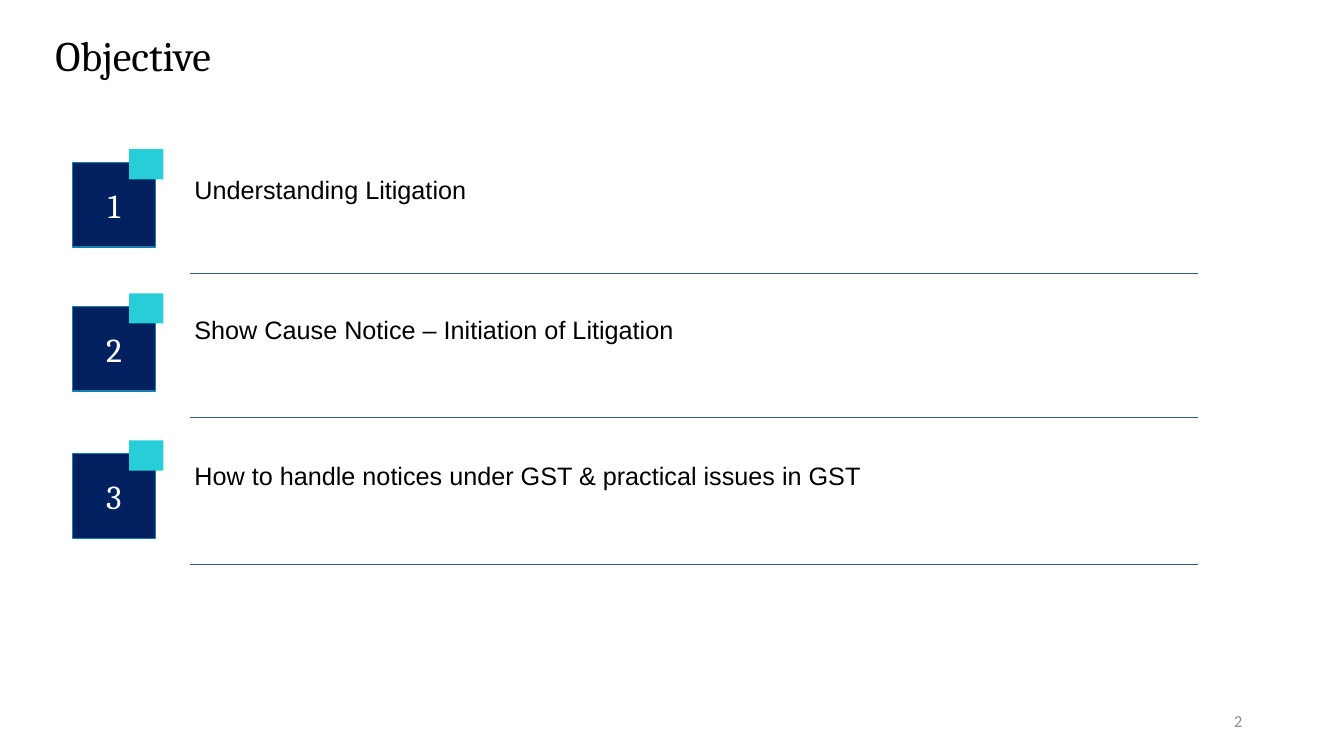
from lxml import etree
from pptx import Presentation
from pptx import util as u
from pptx.dml.color import RGBColor
from pptx.enum import shapes, text
from pptx.oxml import ns

BLACK = RGBColor(0x00, 0x00, 0x00)
WHITE = RGBColor(0xFF, 0xFF, 0xFF)
NAVY = RGBColor(0x00, 0x20, 0x60)
BLUE = RGBColor(0x15, 0x80, 0xA9)
AQUA = RGBColor(0x27, 0xCE, 0xD7)
SLATE = RGBColor(0x33, 0x5B, 0x74)
GREY = RGBColor(0x8C, 0x8C, 0x8C)

# Each goal: badge top, text top, text height, wording
GOALS = [
    (1.61, 1.68, 0.71, "Understanding Litigation"),
    (3.04, 3.07, 0.40, "Show Cause Notice – Initiation of Litigation"),
    (4.50, 4.52, 0.40,
     "How to handle notices under GST & practical issues in GST"),
]


def write(frame, words, font="Arial", size=18, color=BLACK,
          align=text.PP_ALIGN.LEFT, anchor=text.MSO_ANCHOR.TOP):
    frame.word_wrap = True
    frame.vertical_anchor = anchor
    para = frame.paragraphs[0]
    para.alignment = align
    run = para.add_run()
    run.text = words
    run.font.name = font
    run.font.size = u.Pt(size)
    run.font.color.rgb = color


class Deck:
    def __init__(self, show):
        self.slide = show.slides.add_slide(show.slide_layouts[6])
        self.items = self.slide.shapes

    def label(self, left, top, width, height, words, **style):
        box = self.items.add_textbox(*map(u.Inches, (left, top, width, height)))
        write(box.text_frame, words, **style)

    def block(self, group, left, top, width, height, fill, edge=None):
        box = group.shapes.add_shape(
            shapes.MSO_SHAPE.RECTANGLE,
            *map(u.Inches, (left, top, width, height)))
        box.shadow.inherit = False
        box.fill.solid()
        box.fill.fore_color.rgb = fill
        if edge is None:
            box.line.fill.background()
        else:
            box.line.color.rgb = edge
            box.line.width = u.Pt(1)
        return box

    def badge(self, top, digit):
        group = self.items.add_group_shape()
        base = self.block(group, 0.72, top, 0.82, 0.84, NAVY, BLUE)
        write(base.text_frame, digit, font="Cambria", size=24, color=WHITE,
              align=text.PP_ALIGN.CENTER, anchor=text.MSO_ANCHOR.MIDDLE)
        self.block(group, 1.28, top - 0.13, 0.34, 0.3, AQUA)

    def rule(self, top):
        line = self.items.add_connector(
            shapes.MSO_CONNECTOR.STRAIGHT,
            *map(u.Inches, (1.88, top, 11.88, top)))
        line.line.color.rgb = SLATE
        line.line.width = u.Pt(0.5)
        etree.SubElement(line.element.spPr, ns.qn("a:effectLst"))


def main():
    show = Presentation()
    show.slide_width = u.Inches(13.33)
    show.slide_height = u.Inches(7.5)
    deck = Deck(show)

    # Title
    deck.label(0.45, 0.24, 11.77, 0.61, "Objective", font="Cambria", size=30)

    # Numbered goals
    for num, (top, head, tall, words) in enumerate(GOALS, 1):
        deck.badge(top, str(num))
        deck.label(1.83, head, 10.22, tall, words,
                   align=text.PP_ALIGN.JUSTIFY)
        deck.rule(top + 1.1)

    # Page number
    deck.label(9.42, 6.95, 3, 0.4, "2", font="Calibri", size=12, color=GREY,
               align=text.PP_ALIGN.RIGHT, anchor=text.MSO_ANCHOR.MIDDLE)

    show.save("out.pptx")


if __name__ == "__main__":
    main()
